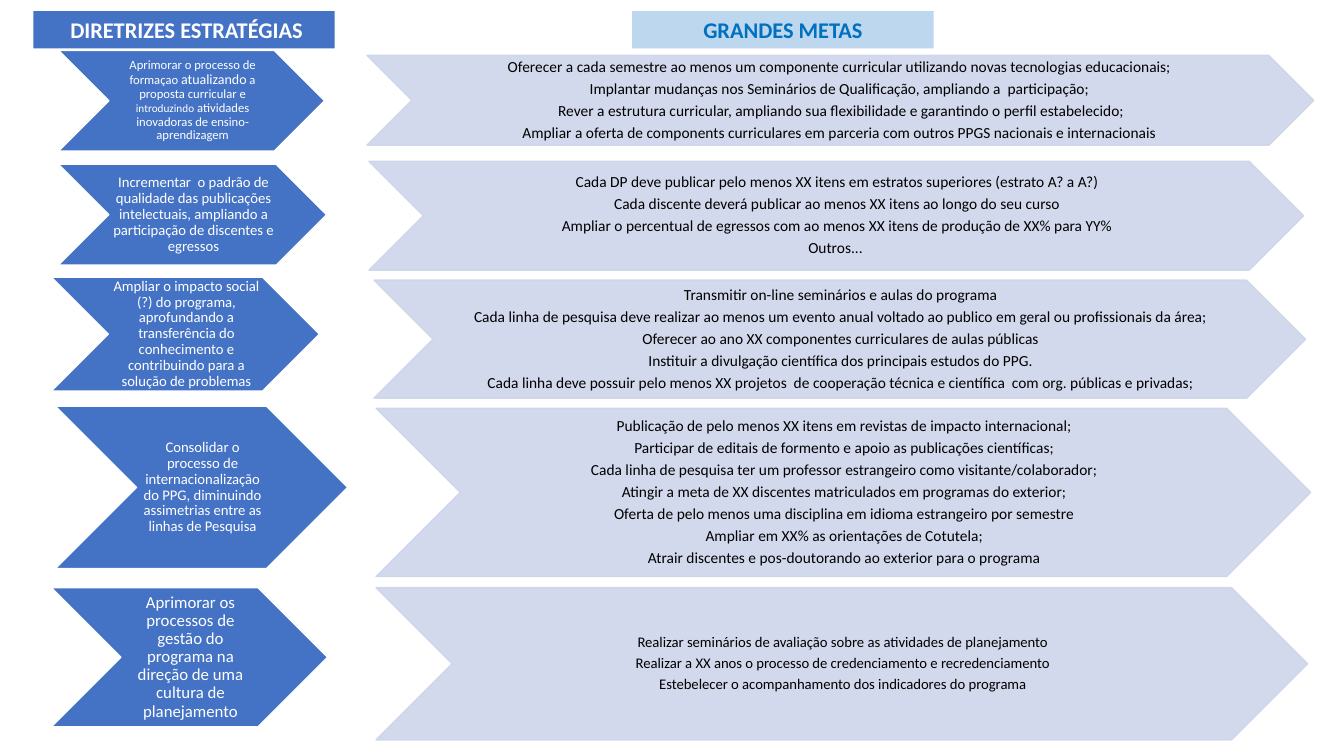
from pptx import Presentation
from pptx import util as u
from pptx.dml.color import RGBColor
from pptx.enum import shapes, text
from pptx.oxml import ns
from lxml import etree

EMU_PER_PX = 9144
FONT = "Calibri"
BLUE = RGBColor(0x44, 0x72, 0xC4)
SKY = RGBColor(0xBD, 0xD7, 0xEE)
LAVENDER = RGBColor(0xCF, 0xD5, 0xEA)
AZURE = RGBColor(0x00, 0x70, 0xC0)
WHITE = RGBColor(0xFF, 0xFF, 0xFF)
BLACK = RGBColor(0x00, 0x00, 0x00)

GUIDELINES = [
    ((58, 50, 264, 100), 9, [
        ("Aprimorar o processo de formaçao ", 9),
        ("atualizando", 10),
        (" a proposta curricular e ", 9),
        ("introduzindo", 8),
        (" atividades inovadoras de ensino-aprendizagem", 9),
    ]),
    ((58, 163, 266, 100), 10.5, [
        ("Incrementar  o padrão de qualidade das publicações intelectuais, "
         "ampliando a participação de discentes e egressos", 10.5),
    ]),
    ((51, 275, 266, 113), 10.5, [
        ("Ampliar o impacto social (?) do programa, aprofundando a transferência "
         "do conhecimento e contribuindo para a solução de problemas", 10.5),
    ]),
    ((55, 403, 290, 161), 10.5, [
        ("Consolidar o processo de internacionalização do PPG, diminuindo "
         "assimetrias entre as linhas de Pesquisa", 10.5),
    ]),
    ((51, 583, 274, 138), 12, [
        ("Aprimorar os processos de gestão do programa na direção de uma "
         "cultura de planejamento", 12),
    ]),
]

GOALS = [
    ((364, 55, 939, 89), 11, [
        "Oferecer a cada semestre ao menos um componente curricular utilizando novas tecnologias educacionais; ",
        "Implantar mudanças nos Seminários de Qualificação, ampliando a  participação; ",
        "Rever a estrutura curricular, ampliando sua flexibilidade e garantindo o perfil estabelecido;",
        "Ampliar a oferta de components curriculares em parceria com outros PPGS nacionais e internacionais ",
    ]),
    ((366, 160, 927, 108), 11, [
        "Cada DP deve publicar pelo menos XX itens em estratos superiores (estrato A? a A?)",
        "Cada discente deverá publicar ao menos XX itens ao longo do seu curso",
        "Ampliar o percentual de egressos com ao menos XX itens de produção de XX% para YY%",
        "Outros... ",
    ]),
    ((371, 278, 924, 117), 11, [
        "Transmitir on-line seminários e aulas do programa",
        "Cada linha de pesquisa deve realizar ao menos um evento anual voltado ao publico em geral ou profissionais da área;",
        "Oferecer ao ano XX componentes curriculares de aulas públicas",
        "Instituir a divulgação científica dos principais estudos do PPG.",
        "Cada linha deve possuir pelo menos XX projetos  de cooperação técnica e científica  com org. públicas e privadas;",
    ]),
    ((373, 405, 927, 167), 11, [
        "Publicação de pelo menos XX itens em revistas de impacto internacional;",
        "Participar de editais de formento e apoio as publicações científicas;",
        "Cada linha de pesquisa ter um professor estrangeiro como visitante/colaborador;",
        "Atingir a meta de XX discentes matriculados em programas do exterior;",
        "Oferta de pelo menos uma disciplina em idioma estrangeiro por semestre",
        "Ampliar em XX% as orientações de Cotutela;",
        "Atrair discentes e pos-doutorando ao exterior para o programa",
    ]),
    ((373, 583, 924, 151), 10.5, [
        "Realizar seminários de avaliação sobre as atividades de planejamento",
        "Realizar a XX anos o processo de credenciamento e recredenciamento",
        "Estebelecer o acompanhamento dos indicadores do programa",
    ]),
]


def px(value):
    return u.Emu(value * EMU_PER_PX)


def add_filled_shape(slide, kind, box, fill):
    shape = slide.shapes.add_shape(kind, *map(px, box))
    shape.shadow.inherit = False
    shape.fill.solid()
    shape.fill.fore_color.rgb = fill
    shape.text_frame.word_wrap = True
    return shape


def style_paragraph(paragraph, size, color, bold=False):
    paragraph.alignment = text.PP_ALIGN.CENTER
    paragraph.font.name = FONT
    paragraph.font.size = u.Pt(size)
    paragraph.font.bold = bold
    paragraph.font.color.rgb = color


def add_heading(slide, box, fill, words, color):
    shape = add_filled_shape(slide, shapes.MSO_SHAPE.RECTANGLE, box, fill)
    shape.line.fill.background()
    frame = shape.text_frame
    frame.auto_size = text.MSO_AUTO_SIZE.SHAPE_TO_FIT_TEXT
    frame.vertical_anchor = text.MSO_ANCHOR.BOTTOM
    paragraph = frame.paragraphs[0]
    paragraph.add_run().text = words
    style_paragraph(paragraph, 16, color, bold=True)


def add_chevron(slide, box, fill, outline, size, color, paragraphs):
    shape = add_filled_shape(slide, shapes.MSO_SHAPE.CHEVRON, box, fill)
    shape.line.color.rgb = outline
    shape.line.width = u.Pt(1)
    frame = shape.text_frame
    frame.vertical_anchor = text.MSO_ANCHOR.MIDDLE
    frame.margin_left, frame.margin_right = px(2), 0
    frame.margin_top = frame.margin_bottom = px(1)
    for index, runs in enumerate(paragraphs):
        paragraph = frame.add_paragraph() if index else frame.paragraphs[0]
        paragraph.line_spacing = 0.9
        paragraph.space_after = u.Pt(round(size * 0.35, 1))
        style_paragraph(paragraph, size, color)
        for words, run_size in runs:
            run = paragraph.add_run()
            run.text = words
            if run_size != size:
                run.font.size = u.Pt(run_size)
    return shape


def set_opacity(shape, percent):
    for color in shape.element.spPr.iter(ns.qn("a:srgbClr")):
        etree.SubElement(color, ns.qn("a:alpha"), val=str(percent * 1000))


def main():
    presentation = Presentation()
    presentation.slide_width = px(1333)
    presentation.slide_height = px(750)
    slide = presentation.slides.add_slide(presentation.slide_layouts[6])

    for guideline, goal in zip(GUIDELINES, GOALS):
        box, size, runs = guideline
        add_chevron(slide, box, BLUE, WHITE, size, WHITE, [runs])
        box, size, lines = goal
        paragraphs = [[(line, size)] for line in lines]
        chevron = add_chevron(slide, box, LAVENDER, LAVENDER, size, BLACK, paragraphs)
        set_opacity(chevron, 90)

    add_heading(slide, (33, 11, 299, 37), BLUE, " DIRETRIZES ESTRATÉGIAS", WHITE)
    add_heading(slide, (627, 11, 299, 37), SKY, "GRANDES METAS", AZURE)
    presentation.save("out.pptx")


if __name__ == "__main__":
    main()
